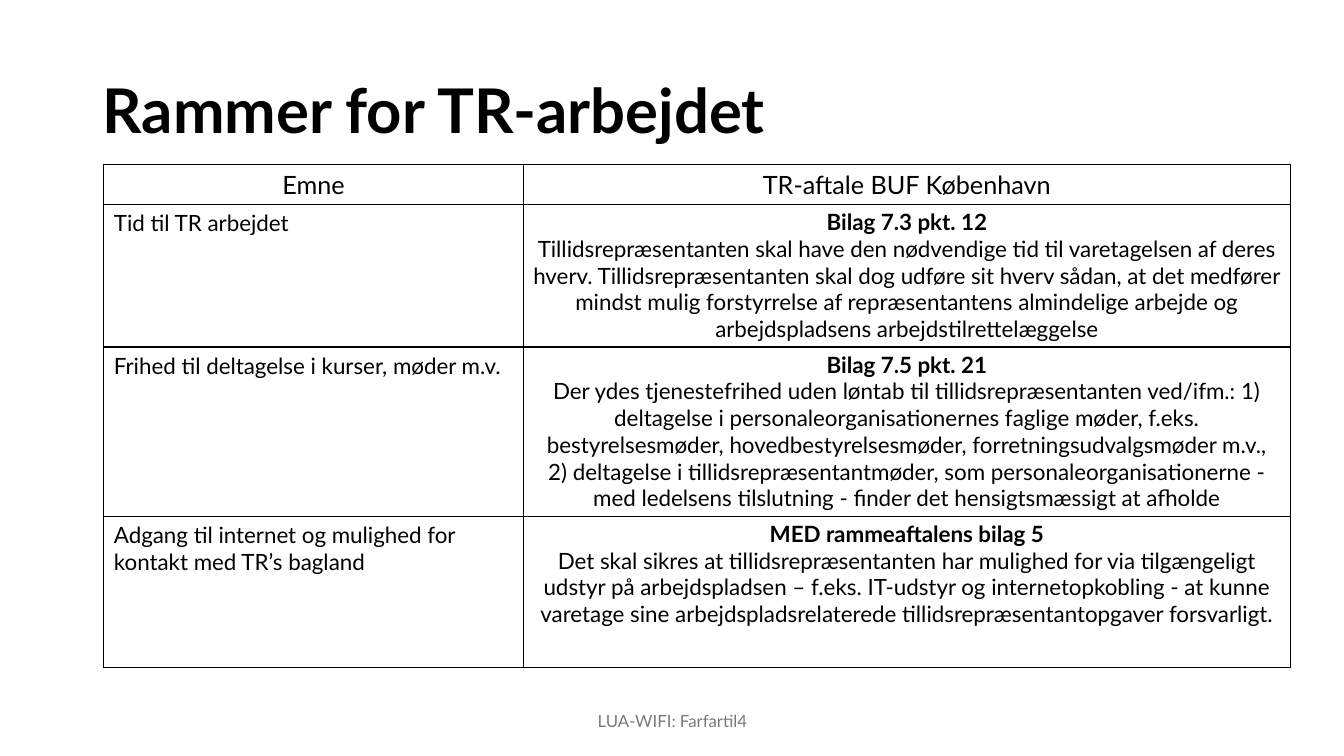
from pptx import Presentation
from pptx.dml.color import RGBColor
from pptx.enum.text import MSO_ANCHOR as Anchor, PP_ALIGN as Align
from pptx.oxml import parse_xml
from pptx.oxml.ns import nsdecls
from pptx.util import Inches, Pt

FONT = "Lato"
BLACK = "000000"
COLUMN_WIDTHS = (4.16, 7.61)
ROW_HEIGHTS = (0.4, 1.4, 1.67, 1.5)
HEADINGS = ("Emne", "TR-aftale BUF København")
TOPICS = (
    ("Tid til TR arbejdet", (
        "Bilag 7.3 pkt. 12",
        "Tillidsrepræsentanten skal have den nødvendige tid til varetagelsen af deres hverv. "
        "Tillidsrepræsentanten skal dog udføre sit hverv sådan, at det medfører mindst mulig "
        "forstyrrelse af repræsentantens almindelige arbejde og arbejdspladsens "
        "arbejdstilrettelæggelse")),
    ("Frihed til deltagelse i kurser, møder m.v.", (
        "Bilag 7.5 pkt. 21",
        "Der ydes tjenestefrihed uden løntab til tillidsrepræsentanten ved/ifm.: 1) deltagelse i "
        "personaleorganisationernes faglige møder, f.eks. bestyrelsesmøder, "
        "hovedbestyrelsesmøder, forretningsudvalgsmøder m.v.,",
        "2) deltagelse i tillidsrepræsentantmøder, som personaleorganisationerne - med ledelsens "
        "tilslutning - finder det hensigtsmæssigt at afholde")),
    ("Adgang til internet og mulighed for kontakt med TR’s bagland", (
        "MED rammeaftalens bilag 5",
        "Det skal sikres at tillidsrepræsentanten har mulighed for via tilgængeligt udstyr på "
        "arbejdspladsen – f.eks. IT-udstyr og internetopkobling - at kunne varetage sine "
        "arbejdspladsrelaterede tillidsrepræsentantopgaver forsvarligt.")),
)


def rgb(color):
    """Turn a hex string into a colour."""
    return RGBColor.from_string(color)


def write(frame, text, size, color=BLACK, align=Align.LEFT, bold_first=False):
    """Fill a text frame and format its paragraphs."""
    frame.text = text
    for index, para in enumerate(frame.paragraphs):
        para.alignment = align
        for span in para.runs:
            span.font.name = FONT
            span.font.size = Pt(size)
            span.font.bold = bold_first and index == 0
            span.font.color.rgb = rgb(color)


def add_text(page, left, top, width, height, text, size, **style):
    """Add a wrapped, vertically centred text box."""
    box = page.shapes.add_textbox(Inches(left), Inches(top), Inches(width), Inches(height))
    frame = box.text_frame
    frame.word_wrap = True
    frame.vertical_anchor = Anchor.MIDDLE
    write(frame, text, size, **style)
    return box


def add_borders(cell):
    """Draw a thin black line on every side of a cell."""
    properties = cell._tc.get_or_add_tcPr()
    for index, side in enumerate(("lnL", "lnR", "lnT", "lnB")):
        properties.insert(index, parse_xml(
            f'<a:{side} {nsdecls("a")} w="{Pt(1)}"><a:solidFill>'
            f'<a:srgbClr val="{BLACK}"/></a:solidFill></a:{side}>'))


def add_agreement_table(page, left, top):
    """Add the table of topics and agreement terms."""
    frame = page.shapes.add_table(
        len(ROW_HEIGHTS), len(COLUMN_WIDTHS), Inches(left), Inches(top),
        Inches(sum(COLUMN_WIDTHS)), Inches(sum(ROW_HEIGHTS)))
    table = frame.table
    table.horz_banding = False
    for column, width in zip(table.columns, COLUMN_WIDTHS):
        column.width = Inches(width)
    for row, height in zip(table.rows, ROW_HEIGHTS):
        row.height = Inches(height)
    for cell in table.iter_cells():
        cell.fill.background()
        add_borders(cell)
    for column, heading in enumerate(HEADINGS):
        write(table.cell(0, column).text_frame, heading, 18, align=Align.CENTER)
    for row, (topic, terms) in enumerate(TOPICS, start=1):
        write(table.cell(row, 0).text_frame, topic, 16)
        cell = table.cell(row, 1)
        cell.margin_left = cell.margin_right = Inches(0.07)
        cell.margin_top = cell.margin_bottom = Inches(0.04)
        write(cell.text_frame, "\n".join(terms), 16, align=Align.CENTER, bold_first=True)


def main():
    """Build the slide and save it."""
    deck = Presentation()
    deck.slide_width, deck.slide_height = Inches(13.33), Inches(7.5)
    page = deck.slides.add_slide(deck.slide_layouts[6])
    title = add_text(page, 0.92, 0.4, 11.5, 1.45, "Rammer for TR-arbejdet", 44, bold_first=True)
    title.text_frame.paragraphs[0].line_spacing = 0.9
    add_agreement_table(page, 1.03, 1.63)
    add_text(page, 4.42, 6.95, 4.5, 0.4, "LUA-WIFI: Farfartil4", 12,
             color="797979", align=Align.CENTER)
    deck.save("out.pptx")


if __name__ == "__main__":
    main()
